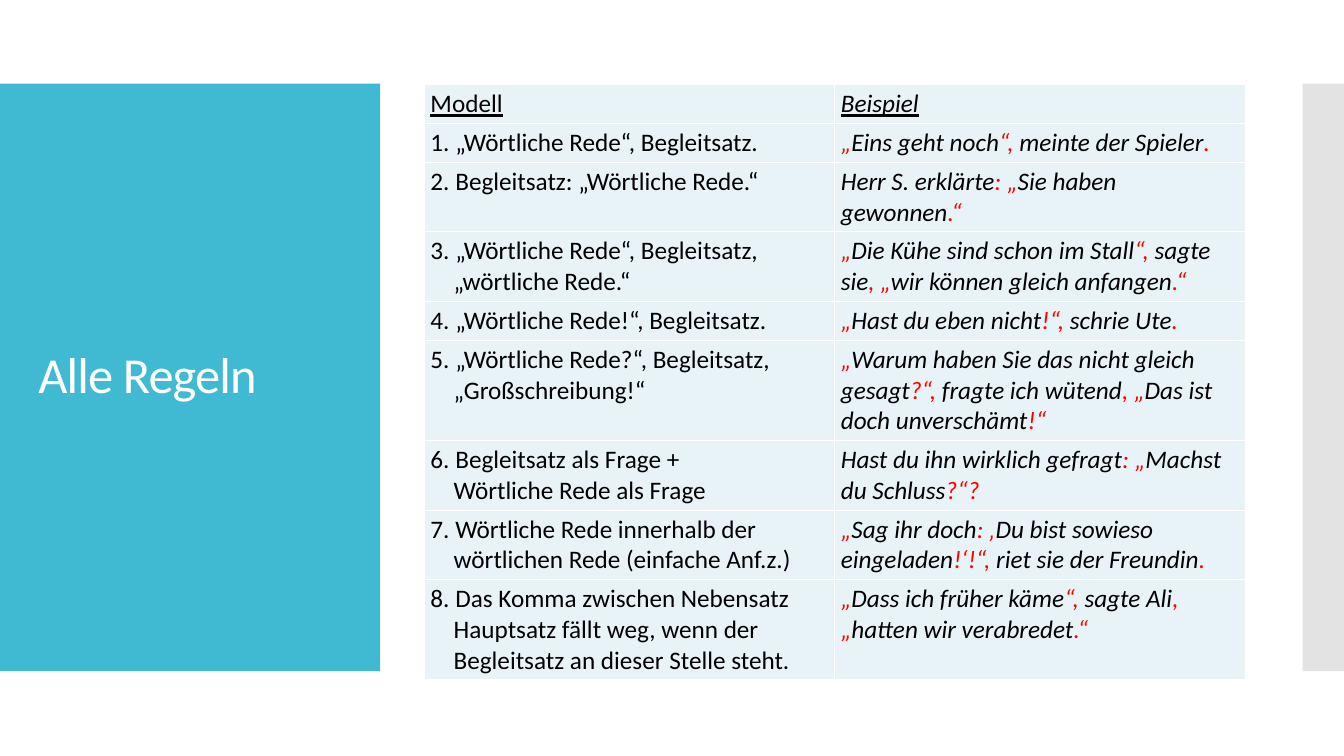
from lxml import etree
from pptx import Presentation
from pptx import util as u
from pptx.dml.color import RGBColor
from pptx.enum import shapes, text
from pptx.oxml import parse_xml
from pptx.oxml.ns import nsdecls, qn

WHITE, BLACK, RED = "FFFFFF", "000000", "FF0000"
TEAL, GREY, CELL = "40BAD2", "C8C8C8", "E8F3F7"
FONT = "Calibri"
LINE_H, CELL_PAD, HANG = 0.3, 0.04, 0.23

# Text between bars is red punctuation; \n breaks the line.
# Each row: model, example, number of lines it needs.
RULES = [
    ("Modell", "Beispiel", 1),
    ("1. „Wörtliche Rede“, Begleitsatz.",
     "|„|Eins geht noch|“, |meinte der Spieler|.", 1),
    ("2. Begleitsatz: „Wörtliche Rede.“",
     "Herr S. erklärte|: „|Sie haben gewonnen|.“", 2),
    ("3. „Wörtliche Rede“, Begleitsatz,\n„wörtliche Rede.“",
     "|„|Die Kühe sind schon im Stall|“, |sagte sie|, „|wir können gleich anfangen|.“", 2),
    ("4. „Wörtliche Rede!“, Begleitsatz.",
     "|„|Hast du eben nicht|!“,| schrie Ute|.", 1),
    ("5. „Wörtliche Rede?“, Begleitsatz,\n„Großschreibung!“",
     "|„|Warum haben Sie das nicht gleich gesagt|?“, |fragte ich wütend|, „|"
     "Das ist doch unverschämt|!“", 3),
    ("6. Begleitsatz als Frage +\nWörtliche Rede als Frage",
     "Hast du ihn wirklich gefragt|: „|Machst du Schluss|?“?", 2),
    ("7. Wörtliche Rede innerhalb der\nwörtlichen Rede (einfache Anf.z.)",
     "|„|Sag ihr doch|: ‚|Du bist sowieso eingeladen|!‘!“, |riet sie der Freundin|.", 2),
    ("8. Das Komma zwischen Nebensatz\nHauptsatz fällt weg, wenn der\n"
     "Begleitsatz an dieser Stelle steht.",
     "|„|Dass ich früher käme|“, |sagte Ali|,\n„|hatten wir verabredet|.“", 3),
]


def rgb(color):
    return RGBColor.from_string(color)


def add_run(p, words, size, color):
    r = p.add_run()
    r.text = words
    r.font.name, r.font.size = FONT, u.Pt(size)
    r.font.color.rgb = rgb(color)
    return r


prs = Presentation()
prs.slide_width, prs.slide_height = u.Inches(13.33), u.Inches(7.5)
s = prs.slides.add_slide(prs.slide_layouts[5])

# Title and the two side bars behind it
title = s.shapes.title
title.left, title.top = u.Inches(0.28), u.Inches(1.23)
title.width, title.height = u.Inches(3.22), u.Inches(5.03)
for left, width, color in [(0, 3.77, TEAL), (12.92, 0.41, GREY)]:
    bar = s.shapes.add_shape(shapes.MSO_SHAPE.RECTANGLE, u.Inches(left),
                             u.Inches(0.83), u.Inches(width), u.Inches(5.83))
    bar.shadow.inherit = False
    bar.fill.solid()
    bar.fill.fore_color.rgb = rgb(color)
    bar.line.fill.background()
    title._element.addprevious(bar._element)
    if color == GREY:
        clr = bar._element.spPr.find(".//" + qn("a:srgbClr"))
        etree.SubElement(clr, qn("a:alpha"), val="50000")

tf = title.text_frame
tf.word_wrap = True
tf.auto_size = text.MSO_AUTO_SIZE.NONE
tf.vertical_anchor = text.MSO_ANCHOR.MIDDLE
p = tf.paragraphs[0]
p.alignment, p.line_spacing = text.PP_ALIGN.LEFT, 0.9
r = add_run(p, "Alle Regeln", 36, WHITE)
r.font._element.set("spc", "-60")

# Table of rules
heights = [u.Inches(2 * CELL_PAD + LINE_H * lines) for _, _, lines in RULES]
table = s.shapes.add_table(len(RULES), 2, u.Inches(4.21), u.Inches(0.84),
                           u.Inches(8.14), sum(heights)).table
table.first_row = table.horz_banding = False
for row, height in zip(table.rows, heights):
    row.height = height

for i, (model, example, _) in enumerate(RULES):
    for j, words in enumerate((model, example)):
        cell = table.cell(i, j)
        cell.margin_left = cell.margin_right = u.Inches(0.06)
        cell.margin_top = cell.margin_bottom = u.Inches(CELL_PAD)
        tcPr = cell._tc.get_or_add_tcPr()
        for side in ("lnL", "lnR", "lnT", "lnB"):
            tcPr.append(parse_xml(
                f'<a:{side} {nsdecls("a")} w="12700"><a:solidFill>'
                f'<a:srgbClr val="{WHITE}"/></a:solidFill></a:{side}>'))
        cell.fill.solid()
        cell.fill.fore_color.rgb = rgb(CELL)

        p = cell.text_frame.paragraphs[0]
        if j == 0 and i > 0:
            pPr = p._p.get_or_add_pPr()
            pPr.set("marL", str(u.Inches(HANG)))
            pPr.set("indent", str(-u.Inches(HANG)))
        for k, part in enumerate(words.split("|")):
            for n, line in enumerate(part.split("\n")):
                if n:
                    p.add_line_break()
                if line:
                    r = add_run(p, line, 18, RED if k % 2 else BLACK)
                    r.font.italic = j == 1
                    r.font.underline = i == 0

prs.save("out.pptx")
